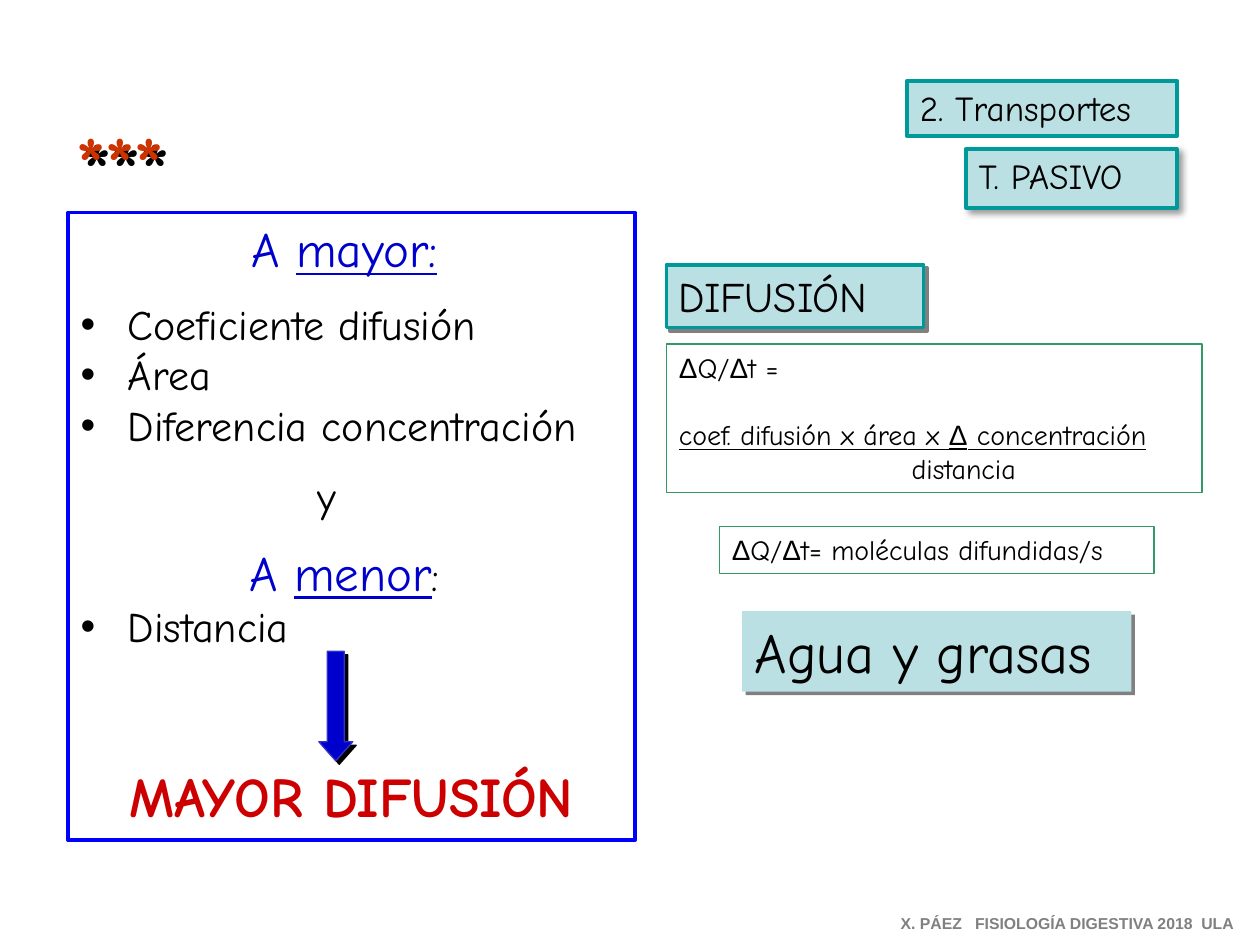
from lxml.etree import SubElement
from pptx import Presentation
from pptx.dml.color import RGBColor
from pptx.enum.shapes import MSO_SHAPE
from pptx.enum.text import MSO_ANCHOR, MSO_AUTO_SIZE, PP_ALIGN
from pptx.oxml.ns import qn
from pptx.util import Pt

BLACK, BLUE, TEAL, PALE, GREEN, GRAY = (
    "000000", "0000CC", "009999", "BBE0E3", "339966", "808080")


def rgb(value):
    return RGBColor.from_string(value)


def add_run(p, text, size=24, color=BLACK, font="Comic Neue",
            bold=False, underline=False):
    r = p.add_run()
    r.text = text
    r.font.size = Pt(size)
    r.font.name = font
    r.font.bold = bold
    r.font.underline = underline
    r.font.color.rgb = rgb(color)
    return r


class SlideBuilder:
    def __init__(self, slide):
        self.s = slide

    def style(self, sp, fill=None, line=None, width=2.25, shadow=None):
        if fill:
            sp.fill.solid()
            sp.fill.fore_color.rgb = rgb(fill)
        else:
            sp.fill.background()
        if line:
            sp.line.color.rgb = rgb(line)
            sp.line.width = Pt(width)
        else:
            sp.line.fill.background()
        sp.shadow.inherit = False
        if shadow:
            self.add_shadow(sp, *shadow)
        return sp

    def add_shadow(self, sp, color, alpha=100, blur=0, dist=2.8):
        effects = sp.element.spPr.find(qn("a:effectLst"))
        outer = SubElement(effects, qn("a:outerShdw"), blurRad=str(Pt(blur)),
                           dist=str(Pt(dist)), dir="2700000", algn="tl",
                           rotWithShape="0")
        clr = SubElement(outer, qn("a:srgbClr"), val=color)
        SubElement(clr, qn("a:alpha"), val=str(alpha * 1000))

    def frame(self, sp):
        tf = sp.text_frame
        tf.word_wrap = True
        tf.auto_size = MSO_AUTO_SIZE.NONE
        tf.vertical_anchor = MSO_ANCHOR.TOP
        return tf

    def paragraph(self, tf, runs, align=PP_ALIGN.LEFT, before=0,
                  left=0, right=0, bullet=False):
        p = tf.paragraphs[0]
        if p.runs:
            p = tf.add_paragraph()
        p.alignment = align
        p.space_before = Pt(before)
        if not bullet:
            pPr = p._p.get_or_add_pPr()
            pPr.set("marL", str(Pt(left)))
            pPr.set("marR", str(Pt(right)))
            pPr.set("indent", "0")
            SubElement(pPr, qn("a:buNone"))
        for text, fmt in runs:
            add_run(p, text, **fmt)

    def placeholder(self, idx, box, **look):
        sp = self.s.placeholders[idx]
        sp.left, sp.top, sp.width, sp.height = map(Pt, box)
        self.style(sp, **look)
        return self.frame(sp)

    def shape(self, kind, box, **look):
        sp = self.s.shapes.add_shape(kind, *map(Pt, box))
        return self.style(sp, **look)

    def box(self, box, **look):
        return self.frame(self.shape(MSO_SHAPE.RECTANGLE, box, **look))

    def label(self, box, text, size, **look):
        self.paragraph(self.box(box, **look), [(text, {"size": size})])

    def text(self, box, text, shadow=None, **fmt):
        sp = self.s.shapes.add_textbox(*map(Pt, box))
        self.style(sp, shadow=shadow)
        self.paragraph(self.frame(sp), [(text, fmt)])


def rate_runs(ending):
    comic, greek = {"size": 16}, {"size": 16, "font": "Arial"}
    return [("Δ", greek), ("Q/", comic), ("Δ", greek), (ending, comic)]


def fill_factors(b, tf):
    heading = {"size": 28, "color": BLUE}
    marked = {**heading, "underline": True}
    center = PP_ALIGN.CENTER
    b.paragraph(tf, [("A ", heading), ("mayor:", marked), (" ", {})], center)
    factors = ["Coeficiente difusión", "Área", "Diferencia concentración"]
    for i, factor in enumerate(factors):
        b.paragraph(tf, [(factor, {})], before=0 if i else 12, bullet=True)
    b.paragraph(tf, [("y", {})], center, before=12, right=28)
    b.paragraph(tf, [("A ", heading), ("menor", marked), (": ", {})],
                center, before=12)
    b.paragraph(tf, [("Distancia", {})], bullet=True)
    b.paragraph(tf, [("MAYOR DIFUSIÓN",
                      {"size": 32, "color": "CC0000", "bold": True})],
                center, before=63)


def fill_formula(b, tf):
    under = {"size": 16, "underline": True}
    b.paragraph(tf, rate_runs("t ="))
    b.paragraph(tf, [("coef. difusión x área x ", under),
                     ("Δ", {**under, "font": "Arial"}),
                     (" concentración", under)], before=19.4)
    b.paragraph(tf, [("distancia", {"size": 16})], left=133)


def main():
    prs = Presentation()
    prs.slide_width, prs.slide_height = Pt(720), Pt(540)
    b = SlideBuilder(prs.slides.add_slide(prs.slide_layouts[1]))

    title = b.placeholder(0, (518.4, 46.1, 154.1, 31.7), fill=PALE, line=TEAL)
    b.paragraph(title, [("2. Transportes", {"size": 20})])
    factors = b.placeholder(1, (38.9, 121.4, 324, 358.6), line="0000FF")
    fill_factors(b, factors)

    arrow = b.shape(MSO_SHAPE.DOWN_ARROW, (182.2, 372.2, 19.4, 62.6),
                    fill=BLUE, line="3333CC", width=0.75, shadow=(BLACK,))
    arrow.adjustments[0], arrow.adjustments[1] = 0.5, 0.56

    b.label((552.2, 85, 120.2, 33.8), "T. PASIVO", 20,
            fill=PALE, line=TEAL, shadow=(BLACK, 40, 4, 3))
    rate = b.box((411.1, 301, 248.4, 26.6), line=GREEN, width=0.75)
    b.paragraph(rate, rate_runs("t= moléculas difundidas/s"))
    formula = b.box((380.9, 196.6, 306, 85), line=GREEN, width=0.75)
    fill_formula(b, formula)
    b.label((424.1, 349.2, 222.5, 46.1), "Agua y grasas", 32,
            fill=PALE, shadow=(GRAY,))
    b.text((36.7, 61.9, 100.8, 60.5), "***", shadow=(BLACK, 100, 0, 4.5),
           size=44, color="CC3300", bold=True)
    b.label((380.9, 151.2, 146.9, 36), "DIFUSIÓN", 24,
            fill=PALE, line=TEAL, shadow=(GRAY,))
    b.text((507.6, 518.4, 213.1, 18), "X. PÁEZ   FISIOLOGÍA DIGESTIVA 2018  ULA",
           size=9, color=GRAY, font="Arial", bold=True)

    prs.save("out.pptx")


if __name__ == "__main__":
    main()
